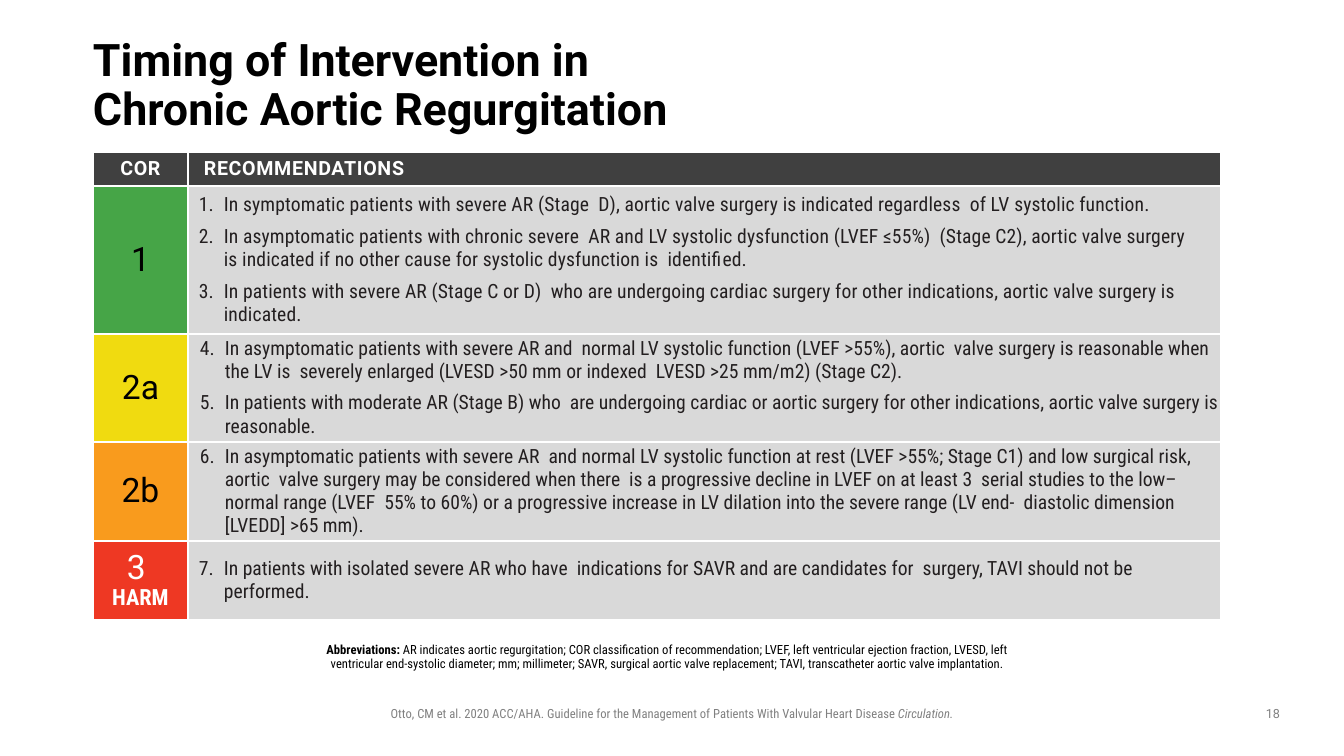
from copy import deepcopy

from lxml import etree
from pptx import Presentation
from pptx import util as u
from pptx.dml.color import RGBColor
from pptx.enum import text
from pptx.oxml.ns import qn

PX = 12700 * 5 / 7  # 100.8 px to the inch

THEME = {
    "title": dict(size=32, name="Roboto", color="000000", bold=True),
    "header": dict(size=14, name="Roboto", color="FFFFFF", bold=True, spc=45),
    "class": dict(size=24, name="Roboto", color="000000", bold=False),
    "class_light": dict(size=24, name="Roboto", color="FFFFFF", bold=False),
    "harm": dict(size=16, name="Roboto Condensed", color="FFFFFF", bold=True),
    "body": dict(size=14, name="Roboto Condensed", color="231F20", bold=False),
    "body_spaced": dict(size=14, name="Roboto Condensed", color="231F20", bold=False, spc=8),
    "note": dict(size=9, name="Roboto Condensed", color="000000", bold=False),
    "note_bold": dict(size=9, name="Roboto Condensed", color="000000", bold=True),
    "source": dict(size=9, name="Roboto Condensed", color="808080"),
    "source_italic": dict(size=9, name="Roboto Condensed", color="808080", italic=True),
    "number": dict(size=9, name="Roboto", color="808080"),
    "header_fill": "404040",
    "body_fill": "D9D9D9",
    "border": "FFFFFF",
}
LEFT, CENTER = text.PP_ALIGN.LEFT, text.PP_ALIGN.CENTER
TOP, MIDDLE = text.MSO_ANCHOR.TOP, text.MSO_ANCHOR.MIDDLE


def px(n):
    return u.Emu(round(n * PX))


def write(paragraph, parts, align=LEFT, spacing=None):
    """Add (words, style) parts; a vertical tab in the words breaks the line."""
    paragraph.alignment = align
    paragraph.line_spacing = spacing
    for words, style in parts:
        for i, line in enumerate(words.split("\v")):
            if i:
                paragraph.add_line_break()
                line_break = paragraph._p.findall(qn("a:br"))[-1]
                line_break.insert(0, deepcopy(line_break.getprevious().find(qn("a:rPr"))))
            if not line:
                continue
            run = paragraph.add_run()
            run.text = line
            for key, value in THEME[style].items():
                if key == "color":
                    run.font.color.rgb = RGBColor.from_string(value)
                elif key == "spc":
                    run._r.get_or_add_rPr().set("spc", str(value))
                else:
                    setattr(run.font, key, u.Pt(value) if key == "size" else value)


deck = Presentation()
deck.slide_width, deck.slide_height = px(1344), px(756)
slide = deck.slides.add_slide(deck.slide_layouts[6])

# Title, abbreviations, source and page number: place, insets, anchor, align, spacing, parts
texts = [
    ((93, 50, 1148, 73), (0, 0, 0, 0), MIDDLE, LEFT, 0.9,
     [("Timing of Intervention in \vChronic Aortic Regurgitation", "title")]),
    ((308, 639, 728, 30), (0, 5, 10, 5), TOP, CENTER, 0.9,
     [("Abbreviations: ", "note_bold"),
      ("AR indicates aortic regurgitation; COR classification of recommendation; "
       "LVEF, left ventricular ejection fraction, LVESD, left ventricular end-systolic diameter; "
       "mm; millimeter; SAVR, surgical aortic valve replacement; "
       "TAVI, transcatheter aortic valve implantation.", "note")]),
    ((320, 701, 704, 25), (10, 5, 10, 5), TOP, CENTER, None,
     [("Otto, CM et al. 2020 ACC/AHA. Guideline for the Management of Patients "
       "With Valvular Heart Disease ", "source"), ("Circulation.", "source_italic")]),
    ((1252, 701, 42, 26), (10, 5, 10, 5), TOP, CENTER, None, [("18", "number")]),
]
for place, insets, anchor, align, spacing, parts in texts:
    frame = slide.shapes.add_textbox(*map(px, place)).text_frame
    frame.word_wrap = True
    frame.vertical_anchor = anchor
    for side, inset in zip(("left", "top", "right", "bottom"), insets):
        setattr(frame, f"margin_{side}", px(inset))
    write(frame.paragraphs[0], parts, align, spacing)

# Classes of recommendation: label, fill, height, compact, body style, recommendations
classes = [
    ([("1", "class")], "46A547", 148, False, "body_spaced", [
        "In symptomatic patients with severe AR (Stage  D), aortic valve surgery is indicated "
        "regardless  of LV systolic function.",
        "In asymptomatic patients with chronic severe  AR and LV systolic dysfunction "
        "(LVEF ≤55%)  (Stage C2), aortic valve surgery \vis indicated if no other cause for "
        "systolic dysfunction is  identified.",
        "In patients with severe AR (Stage C or D)  who are undergoing cardiac surgery for "
        "other indications, aortic valve surgery is indicated."]),
    ([("2a", "class")], "F0DB10", 108, True, "body", [
        "In asymptomatic patients with severe AR and  normal LV systolic function (LVEF >55%), "
        "aortic  valve surgery is reasonable when the LV is  severely enlarged "
        "(LVESD >50 mm or indexed  LVESD >25 mm/m2) (Stage C2).",
        "In patients with moderate AR (Stage B) who  are undergoing cardiac or aortic surgery "
        "for other indications, aortic valve surgery is reasonable."]),
    ([("2b", "class")], "F99B1D", 99, True, "body", [
        "In asymptomatic patients with severe AR  and normal LV systolic function at rest "
        "(LVEF >55%; Stage C1) and low surgical risk, aortic  valve surgery may be considered "
        "when there  is a progressive decline in LVEF on at least 3  serial studies to the "
        "low–normal range (LVEF  55% to 60%) or a progressive increase in LV dilation into the "
        "severe range (LV end-  diastolic dimension [LVEDD] >65 mm)."]),
    ([("3 \v", "class_light"), ("HARM", "harm")], "EE3823", 79, False, "body", [
        "In patients with isolated severe AR who have  indications for SAVR and are candidates "
        "for  surgery, TAVI should not be performed."]),
]
HEADER_HEIGHT = 34
table_height = HEADER_HEIGHT + sum(row[2] for row in classes)
table = slide.shapes.add_table(len(classes) + 1, 2, px(93), px(152), px(1128), px(table_height)).table
table.horz_banding = False
table.columns[0].width, table.columns[1].width = px(95), px(1033)

# Header row
table.rows[0].height = px(HEADER_HEIGHT)
for column, (heading, align, inset) in enumerate([("COR", CENTER, 10), ("RECOMMENDATIONS", LEFT, 16)]):
    cell = table.cell(0, column)
    cell.margin_left = px(inset)
    cell.vertical_anchor = MIDDLE
    cell.fill.solid()
    cell.fill.fore_color.rgb = RGBColor.from_string(THEME["header_fill"])
    write(cell.text_frame.paragraphs[0], [(heading, "header")], align)

# Class rows, with recommendations numbered through the whole table
first_number = 1
for row, (label, color, height, compact, style, recommendations) in enumerate(classes, 1):
    table.rows[row].height = px(height)
    label_cell, advice_cell = table.cell(row, 0), table.cell(row, 1)
    for cell, fill, insets, anchor in [
        (label_cell, color, (5, 5, 5, 5), MIDDLE),
        (advice_cell, THEME["body_fill"], (0, 3, 0, 0) if compact else (5, 5, 5, 5),
         TOP if compact else MIDDLE),
    ]:
        cell.fill.solid()
        cell.fill.fore_color.rgb = RGBColor.from_string(fill)
        cell.vertical_anchor = anchor
        for side, inset in zip(("left", "top", "right", "bottom"), insets):
            setattr(cell, f"margin_{side}", px(inset))
    write(label_cell.text_frame.paragraphs[0], label, CENTER, 0.9 if len(label) > 1 else None)

    frame = advice_cell.text_frame
    for i, advice in enumerate(recommendations):
        paragraph = frame.add_paragraph() if i else frame.paragraphs[0]
        paragraph.space_after = u.Pt(6)
        props = paragraph._p.get_or_add_pPr()
        props.set("marL", str(px(37 if compact else 31)))
        props.set("indent", str(px(-25)))
        etree.SubElement(props, qn("a:buAutoNum"), type="arabicPeriod", startAt=str(first_number))
        write(paragraph, [(advice, style)])
    first_number += len(recommendations)

# White rules around every cell
for cell in table.iter_cells():
    props = cell._tc.get_or_add_tcPr()
    for i, edge in enumerate(("a:lnL", "a:lnR", "a:lnT", "a:lnB")):
        line = etree.Element(qn(edge), w=str(u.Pt(2.25)))
        fill = etree.SubElement(line, qn("a:solidFill"))
        etree.SubElement(fill, qn("a:srgbClr"), val=THEME["border"])
        props.insert(i, line)

deck.save("out.pptx")
